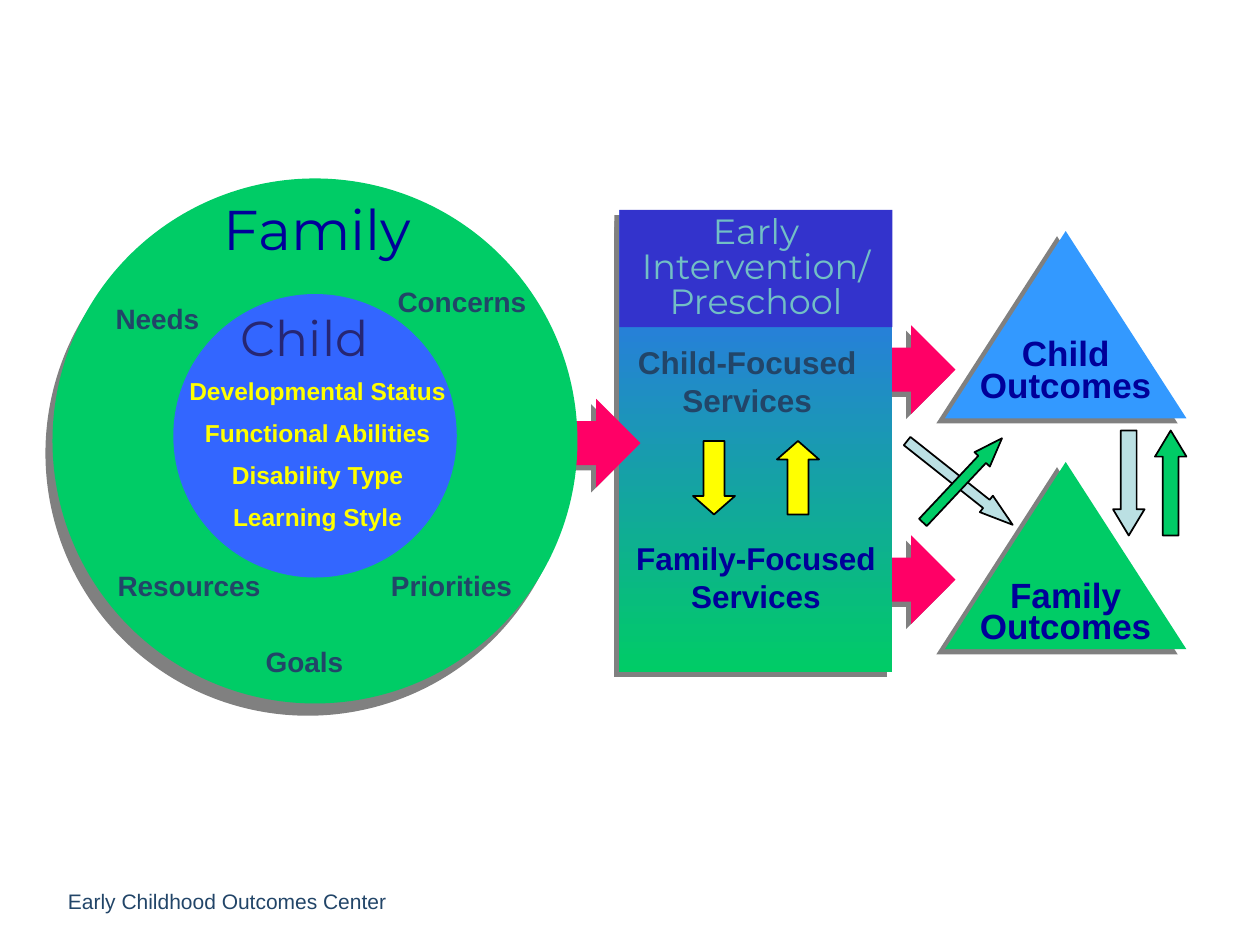
"""Build the family and child outcomes flow slide."""
from lxml.etree import SubElement as Sub
from pptx import Presentation
from pptx.dml.color import RGBColor as RGB
from pptx.enum.shapes import MSO_SHAPE as Form
from pptx.enum.text import MSO_ANCHOR as Anchor, PP_ALIGN as Align
from pptx.oxml.ns import qn
from pptx.util import Pt

HUES = {
    "green": "00CC66", "blue": "3366FF", "sky": "3399FF", "deep": "3333CC",
    "pink": "FF0066", "yellow": "FFFF00", "pale": "BBE0E3", "navy": "000099",
    "slate": "224568", "teal": "72BFC5", "ink": "262673",
    "gray": "808080", "black": "000000",
}


def hue(name):
    """Return the named colour."""
    return RGB.from_string(HUES[name])


def write(shape, text, size=16, color="slate", font="Arial", bold=True,
          lead=18, gap=0, align=Align.CENTER, anchor=Anchor.TOP):
    """Fill a shape with formatted text, one paragraph a line."""
    frame = shape.text_frame
    frame.word_wrap = True
    frame.vertical_anchor = anchor
    frame.text = text
    for num, para in enumerate(frame.paragraphs):
        para.alignment = align
        if lead:
            para.line_spacing = Pt(lead)
        if num and gap:
            para.space_before = Pt(gap)
        face = para.runs[0].font
        face.name, face.size, face.bold = font, Pt(size), bold
        face.color.rgb = hue(color)


class Deck:
    """Hold the style and the current slide."""

    head = "Montserrat"

    def __init__(self):
        self.show = Presentation()
        self.show.slide_width, self.show.slide_height = Pt(720), Pt(540)
        self.slide = self.show.slides.add_slide(self.show.slide_layouts[6])

    def shape(self, form, box, fill, adj=None, line=None, shade=None, turn=0):
        """Add a preset shape; shade is the shadow's distance and angle."""
        item = self.slide.shapes.add_shape(form, *map(Pt, box))
        item.rotation = turn
        if adj is not None:
            item.adjustments[0], item.adjustments[1] = 0.5, adj
        if isinstance(fill, tuple):
            item.fill.gradient()
            item.fill.gradient_angle = 270
            for stop, name, spot in zip(item.fill.gradient_stops, fill, (0, 1)):
                stop.color.rgb, stop.position = hue(name), spot
        else:
            item.fill.solid()
            item.fill.fore_color.rgb = hue(fill)
        if line:
            item.line.color.rgb, item.line.width = hue(line), Pt(1)
        else:
            item.line.fill.background()
        item.shadow.inherit = False
        if shade:
            self.cast(item, *shade)
        return item

    def cast(self, item, dist, angle):
        """Give a shape a hard gray shadow."""
        list_ = item._element.spPr.find(qn("a:effectLst"))
        drop = Sub(list_, qn("a:outerShdw"), blurRad="0", dist=str(Pt(dist)),
                   dir=str(angle * 60000), algn="ctr", rotWithShape="0")
        Sub(drop, qn("a:srgbClr"), val=HUES["gray"])

    def text(self, box, text, **style):
        """Add a text box."""
        write(self.slide.shapes.add_textbox(*map(Pt, box)), text, **style)

    def flow(self, left, top):
        """Add a pink flow arrow."""
        self.shape(Form.RIGHT_ARROW, (left, top, 102, 50.5), "pink",
                   adj=0.5, shade=(4.2, 135))

    def goal(self, top, fill, text, low):
        """Add an outcome triangle with its label."""
        self.shape(Form.ISOSCELES_TRIANGLE, (540, top, 138, 107), fill,
                   shade=(5.8, 149))
        self.text((552, low, 114, 43), text, size=20, color="navy")

    def link(self, form, box, fill, adj, turn=0):
        """Add an outlined arrow."""
        self.shape(form, box, fill, adj=adj, line="black", turn=turn)


def main():
    """Draw the slide and save it."""
    deck = Deck()

    for top in (306, 186):
        deck.flow(444, top)
    deck.shape(Form.RECTANGLE, (354, 120, 156, 264), ("blue", "green"),
               shade=(4.2, 135))
    band = deck.shape(Form.RECTANGLE, (354, 120, 156, 67), "deep")
    write(band, "Early Intervention/ Preschool", size=20, color="teal",
          font=deck.head, bold=False, lead=20)
    deck.text((352, 192, 150, 52), "Child-Focused Services", size=18, lead=22)
    deck.text((354, 304, 156, 52), "Family-Focused Services", size=18,
              color="navy", lead=22)

    deck.goal(132, "sky", "Child\nOutcomes", 192)
    deck.goal(264, "green", "Family\nOutcomes", 330)

    deck.flow(264, 228)
    deck.shape(Form.OVAL, (30, 102, 300, 300), "green", shade=(8.1, 120))
    deck.text((112, 128, 139, 25), "Family", size=32, color="navy",
              font=deck.head, bold=False)
    for left, top, wide, word in (
        (54, 170, 72, "Needs"), (219, 160.5, 90, "Concerns"),
        (54, 322.5, 108, "Resources"), (216, 322.5, 84, "Priorities"),
        (144, 366, 60, "Goals"),
    ):
        deck.text((left, top, wide, 25), word)
    deck.shape(Form.OVAL, (99, 168, 162, 162), "blue")
    traits = ("Developmental Status", "Functional Abilities",
              "Disability Type", "Learning Style")
    deck.text((99, 216, 165, 91), "\n".join(traits), size=14, color="yellow",
              lead=12, gap=12)
    deck.text((124.5, 182, 99, 32), "Child", size=28, color="ink",
              font=deck.head, bold=False, lead=24)

    deck.link(Form.DOWN_ARROW, (396, 252, 24, 42), "yellow", 0.44)
    deck.link(Form.UP_ARROW, (444, 252, 24, 42), "yellow", 0.44)
    deck.link(Form.RIGHT_ARROW, (510, 270, 77, 12), "pale", 1.6, 38.4)
    deck.link(Form.RIGHT_ARROW, (517, 268.5, 66, 12), "green", 1.38, 313.2)
    deck.link(Form.UP_ARROW, (660, 246, 18, 60), "green", 0.83)
    deck.link(Form.DOWN_ARROW, (636, 246, 18, 60), "pale", 0.83)

    deck.text((0, 500.5, 228, 29), "Early Childhood Outcomes Center", size=12,
              bold=False, lead=None, align=Align.RIGHT, anchor=Anchor.MIDDLE)
    deck.show.save("out.pptx")


if __name__ == "__main__":
    main()
